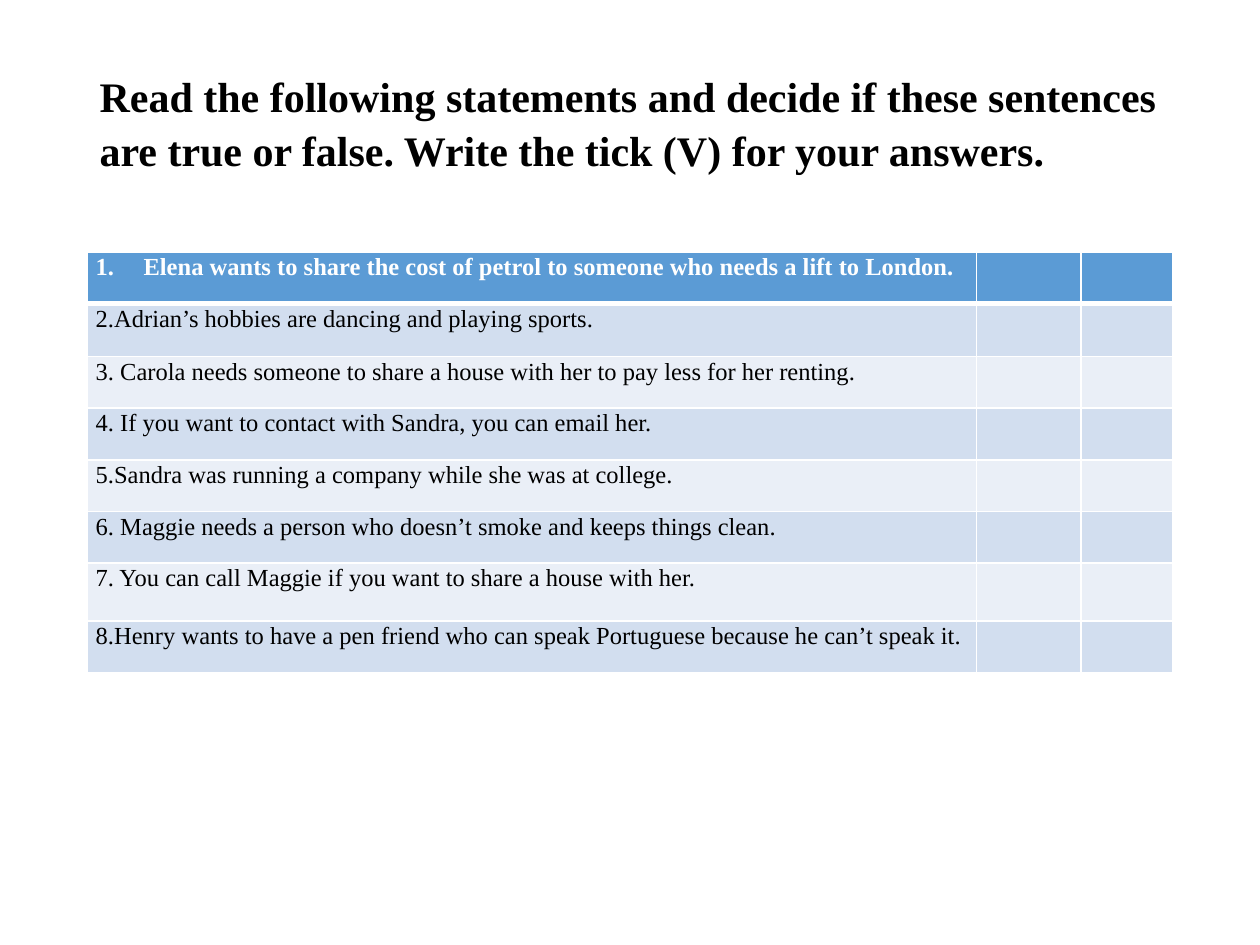
from dataclasses import dataclass

from lxml.etree import SubElement
from pptx import Presentation
from pptx.dml.color import RGBColor
from pptx.enum.text import MSO_ANCHOR, MSO_AUTO_SIZE, PP_ALIGN
from pptx.oxml.ns import qn
from pptx.util import Inches, Pt

FONT = "Times New Roman"
COLORS = {"head": "5B9BD5", "dark": "D2DEEF", "light": "EAEFF7",
          "white": "FFFFFF", "black": "000000"}
LEFT, WIDTH = 0.69, 8.62
COLS = [7.06, 0.83, 0.73]


@dataclass
class Row:
    text: str
    height: float = 0.41


ROWS = [
    Row("Elena wants to share the cost of petrol to someone who needs a lift to London."),
    Row("2.Adrian’s hobbies are dancing and playing sports.", 0.42),
    Row("3. Carola needs someone to share a house with her to pay less for her renting."),
    Row("4. If you want to contact with Sandra, you can email her."),
    Row("5.Sandra was running a company while she was at college."),
    Row("6. Maggie needs a person who doesn’t smoke and keeps things clean."),
    Row("7. You can call Maggie if you want to share a house with her.", 0.46),
    Row("8.Henry wants to have a pen friend who can speak Portuguese because he can’t speak it."),
]


def rgb(name: str) -> RGBColor:
    return RGBColor.from_string(COLORS[name])


def write(frame, text: str, size: int, color: str, bold: bool):
    para = frame.paragraphs[0]
    para.alignment = PP_ALIGN.LEFT
    para.line_spacing = 1.07
    run = para.add_run()
    run.text = text
    run.font.name = FONT
    run.font.size = Pt(size)
    run.font.bold = bold
    run.font.color.rgb = rgb(color)
    return para


def number(para) -> None:
    """Give the paragraph an automatic number with a hanging indent."""
    props = para._p.get_or_add_pPr()
    props.set("marL", str(Inches(0.38)))
    props.set("indent", str(-Inches(0.38)))
    SubElement(props, qn("a:buFont"), typeface="+mj-lt")
    SubElement(props, qn("a:buAutoNum"), type="arabicPeriod")


def border(cell, top: int, bottom: int) -> None:
    props = cell._tc.get_or_add_tcPr()
    for side, width in (("L", 1), ("R", 1), ("T", top), ("B", bottom)):
        line = SubElement(props, qn(f"a:ln{side}"), w=str(Pt(width)))
        fill = SubElement(line, qn("a:solidFill"))
        SubElement(fill, qn("a:srgbClr"), val=COLORS["white"])


def add_title(slide) -> None:
    title = slide.shapes.title
    title.left, title.top = Inches(LEFT), Inches(0.4)
    title.width, title.height = Inches(WIDTH), Inches(1.45)
    frame = title.text_frame
    frame.word_wrap = True
    frame.auto_size = MSO_AUTO_SIZE.NONE
    frame.vertical_anchor = MSO_ANCHOR.MIDDLE
    frame.margin_bottom = Inches(0.38)
    write(frame, "Read the following statements and decide if these sentences "
          "are true or false. Write the tick (V) for your answers.",
          24, "black", True)


def add_grid(slide) -> None:
    high = sum(row.height for row in ROWS)
    table = slide.shapes.add_table(
        len(ROWS), len(COLS), Inches(LEFT), Inches(2),
        Inches(WIDTH), Inches(high)).table
    for col, width in zip(table.columns, COLS):
        col.width = Inches(width)
    for i, row in enumerate(ROWS):
        head = i == 0
        table.rows[i].height = Inches(row.height)
        tint = "head" if head else "dark" if i % 2 else "light"
        for cell in table.rows[i].cells:
            border(cell, 3 if i == 1 else 1, 3 if head else 1)
            cell.fill.solid()
            cell.fill.fore_color.rgb = rgb(tint)
        first = table.cell(i, 0)
        first.margin_left = first.margin_right = Inches(0.07)
        first.margin_top = first.margin_bottom = 0
        para = write(first.text_frame, row.text, 14,
                     "white" if head else "black", head)
        if head:
            number(para)


def main() -> None:
    deck = Presentation()
    deck.slide_width, deck.slide_height = Inches(10), Inches(7.5)
    slide = deck.slides.add_slide(deck.slide_layouts[5])
    add_title(slide)
    add_grid(slide)
    deck.save("out.pptx")


if __name__ == "__main__":
    main()
